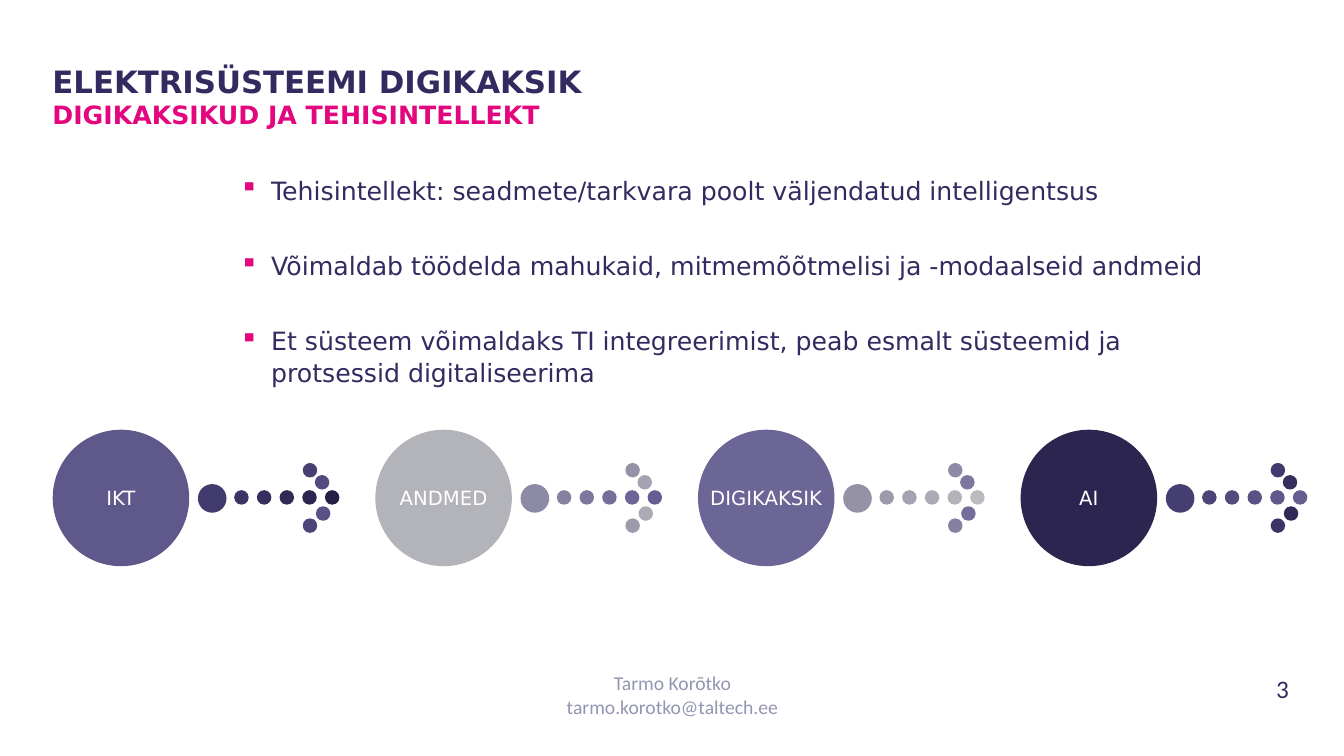
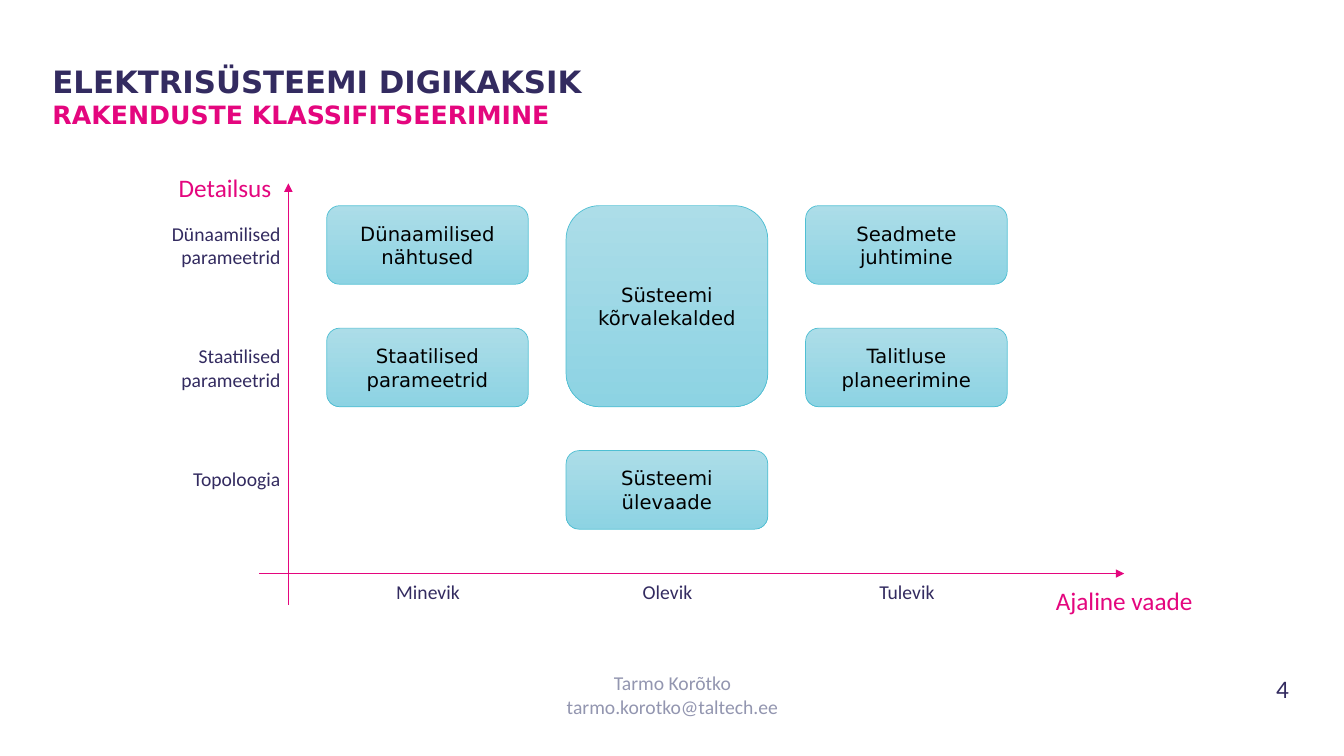
from dataclasses import dataclass
from typing import NamedTuple

from lxml.etree import SubElement
from pptx import Presentation
from pptx.dml.color import RGBColor
from pptx.enum.shapes import MSO_CONNECTOR, MSO_SHAPE
from pptx.enum.text import MSO_ANCHOR, PP_ALIGN
from pptx.oxml.ns import qn
from pptx.util import Inches, Pt


@dataclass(frozen=True)
class Theme:
    navy: str = "332B60"
    pink: str = "E4067E"
    muted: str = "9396B0"
    white: str = "FFFFFF"
    black: str = "000000"
    tile_top: str = "ACDDE8"
    tile_bottom: str = "8DD3E3"
    tile_edge: str = "4FBFD3"
    ramp: tuple = (
        "262047", "2B254F", "302A56", "352F5E", "3B3465", "413A6C",
        "463F72", "4C4579", "524B7F", "585285", "5F588B", "655F91",
        "6C6696", "746F9A", "7C789D", "8581A1", "8D8AA5", "9592A8",
        "9C9BAC", "A4A3B1", "ACABB5", "B3B3BA", "BBBABF",
    )
    display: str = "DejaVu Sans"
    plain: str = "Calibri"
    title: int = 22
    body: int = 18
    small: int = 14


THEME = Theme()


class Box(NamedTuple):
    left: float
    top: float
    width: float
    height: float

    def inside(self, dx, dy, width, height):
        return Box(self.left + dx, self.top + dy, width, height)

    def emu(self):
        return [Inches(length) for length in self]


def set_frame(frame, inset=None, anchor=MSO_ANCHOR.TOP, wrap=True):
    frame.word_wrap = wrap
    frame.vertical_anchor = anchor
    if inset is not None:
        frame.margin_left = frame.margin_right = Inches(inset)
        frame.margin_top = frame.margin_bottom = Inches(inset)
    return frame


def text_area(slide, box, **frame_format):
    return set_frame(slide.shapes.add_textbox(*box.emu()).text_frame, **frame_format)


def write(frame, text, size=THEME.small, color=THEME.navy, font=THEME.plain,
          bold=False, align=PP_ALIGN.LEFT, before=0, spacing=None, bullet=None):
    """Write one paragraph, after any text the frame already holds."""
    started = bool(frame.text)
    paragraph = frame.add_paragraph() if started else frame.paragraphs[0]
    if bullet:
        props = paragraph._p.get_or_add_pPr()
        props.set("marL", str(Inches(0.31)))
        props.set("indent", str(-Inches(0.31)))
        bullet_color = SubElement(props, qn("a:buClr"))
        SubElement(bullet_color, qn("a:srgbClr")).set("val", THEME.pink)
        SubElement(props, qn("a:buChar")).set("char", bullet)
    paragraph.alignment = align
    if started and before:
        paragraph.space_before = Pt(before)
    if spacing:
        paragraph.line_spacing = spacing
    run = paragraph.add_run()
    run.text = text
    run.font.size = Pt(size)
    run.font.name = font
    run.font.bold = bold
    run.font.color.rgb = RGBColor.from_string(color)


def add_circle(slide, box, color):
    circle = slide.shapes.add_shape(MSO_SHAPE.OVAL, *box.emu())
    circle.shadow.inherit = False
    circle.fill.solid()
    circle.fill.fore_color.rgb = RGBColor.from_string(color)
    circle.line.color.rgb = RGBColor.from_string(color)
    circle.line.width = Pt(1)
    return circle


def add_tile(slide, box, text):
    tile = slide.shapes.add_shape(MSO_SHAPE.ROUNDED_RECTANGLE, *box.emu())
    tile.shadow.inherit = False
    tile.fill.gradient()
    tile.fill.gradient_angle = 270
    for stop, color in zip(tile.fill.gradient_stops, (THEME.tile_top, THEME.tile_bottom)):
        stop.color.rgb = RGBColor.from_string(color)
    tile.line.color.rgb = RGBColor.from_string(THEME.tile_edge)
    tile.line.width = Pt(0.5)
    frame = set_frame(tile.text_frame, anchor=MSO_ANCHOR.MIDDLE)
    write(frame, text, font=THEME.display, color=THEME.black, align=PP_ALIGN.CENTER)


def add_axis(slide, *ends):
    axis = slide.shapes.add_connector(MSO_CONNECTOR.STRAIGHT, *map(Inches, ends))
    axis.line.color.rgb = RGBColor.from_string(THEME.pink)
    axis.line.width = Pt(0.5)
    SubElement(axis.line._get_or_add_ln(), qn("a:tailEnd")).set("type", "triangle")
    SubElement(axis._element.spPr, qn("a:effectLst"))


def add_base_slide(deck, subtitle, number):
    """Add a blank slide with the shared heading, footer and page number."""
    slide = deck.slides.add_slide(deck.slide_layouts[6])
    page = text_area(slide, Box(12.3, 6.63, 0.84, 0.4))
    write(page, str(number), size=THEME.body, align=PP_ALIGN.CENTER)
    footer = text_area(slide, Box(3.69, 6.61, 5.96, 0.58))
    for line in ("Tarmo Korõtko", "tarmo.korotko@taltech.ee"):
        write(footer, line, color=THEME.muted, align=PP_ALIGN.CENTER)
    heading = text_area(slide, Box(0.52, 0.62, 11.48, 0.89), inset=0)
    write(heading, "ELEKTRISÜSTEEMI DIGIKAKSIK", size=THEME.title,
          font=THEME.display, bold=True)
    write(heading, subtitle, size=THEME.body, color=THEME.pink,
          font=THEME.display, bold=True)
    return slide


def add_bullets(slide, box, points):
    frame = text_area(slide, box, inset=0)
    for point in points:
        write(frame, point, size=THEME.body, font=THEME.display,
              before=31, spacing=1.05, bullet="▪")


def add_stage(slide, box, label, colors):
    """Draw a labelled circle followed by an arrow made of dots."""
    *dot_colors, circle_color = colors
    dot, start_dot = 0.13, 0.27
    shaft = [(2.7 - 0.225 * step, 0.6, dot) for step in range(5)]
    head = [(2.48, 0.33, dot), (2.48, 0.88, dot), (2.6, 0.45, dot), (2.61, 0.76, dot)]
    dots = shaft + [(1.44, 0.54, start_dot)] + head
    for (dx, dy, size), color in zip(dots, dot_colors):
        add_circle(slide, box.inside(dx, dy, size, size), color)
    circle = add_circle(slide, box.inside(0, 0, box.height, box.height), circle_color)
    frame = set_frame(circle.text_frame, inset=0, anchor=MSO_ANCHOR.MIDDLE, wrap=False)
    write(frame, label, color=THEME.white, font=THEME.display, align=PP_ALIGN.CENTER)


def add_process(slide, box, labels):
    """Lay the stages out evenly, their colours running up the ramp and back."""
    colors = THEME.ramp + THEME.ramp[-2::-1]
    pitch = box.width / len(labels)
    per_stage = 11
    for index, label in enumerate(labels):
        first = index * per_stage
        add_stage(slide, box.inside(index * pitch, 0, pitch, box.height), label,
                  colors[first:first + per_stage])


def add_classification(slide, box):
    """Draw the axes, their labels and the tiles of applications."""
    origin_x, origin_y = box.left + 1.27, box.top + 4.03
    add_axis(slide, origin_x, origin_y + 0.31, origin_x, box.top + 0.16)
    add_axis(slide, origin_x - 0.29, origin_y, box.left + 9.56, origin_y)

    grid = box.inside(1.65, 0.38, 6.75, 3.21)
    column_pitch, row_pitch = 2.375, 1.215
    tile_width, tile_height = 2, 0.78
    tiles = [
        (0, 0, 1, "Dünaamilised nähtused"),
        (0, 1, 1, "Staatilised parameetrid"),
        (1, 0, 2, "Süsteemi kõrvalekalded"),
        (2, 0, 1, "Seadmete juhtimine"),
        (2, 1, 1, "Talitluse planeerimine"),
        (1, 2, 1, "Süsteemi ülevaade"),
    ]
    for column, row, rows, text in tiles:
        height = tile_height + (rows - 1) * row_pitch
        add_tile(slide, grid.inside(column * column_pitch, row * row_pitch,
                                    tile_width, height), text)

    detail = text_area(slide, box.inside(0.06, 0, 1.14, 0.4))
    write(detail, "Detailsus", size=THEME.body, color=THEME.pink, align=PP_ALIGN.RIGHT)
    time = text_area(slide, box.inside(8.78, 4.1, 1.56, 0.4), wrap=False)
    write(time, "Ajaline vaade", size=THEME.body, color=THEME.pink, align=PP_ALIGN.CENTER)

    levels = ("Dünaamilised parameetrid", "Staatilised parameetrid", "Topoloogia")
    for row, level in enumerate(levels):
        frame = text_area(slide, box.inside(0, 0.49 + row * row_pitch, 1.29, 0.57))
        write(frame, level, align=PP_ALIGN.RIGHT)
    for column, period in enumerate(("Minevik", "Olevik", "Tulevik")):
        frame = text_area(slide, box.inside(2.01 + column * column_pitch, 4.04, 1.29, 0.34))
        write(frame, period, align=PP_ALIGN.CENTER)


def main():
    deck = Presentation()
    deck.slide_width, deck.slide_height = Inches(13.33), Inches(7.5)

    twins = add_base_slide(deck, "DIGIKAKSIKUD JA TEHISINTELLEKT", 3)
    add_bullets(twins, Box(2.38, 1.72, 9.63, 2.38), (
        "Tehisintellekt: seadmete/tarkvara poolt väljendatud intelligentsus",
        "Võimaldab töödelda mahukaid, mitmemõõtmelisi ja -modaalseid andmeid",
        "Et süsteem võimaldaks TI integreerimist, peab esmalt süsteemid ja "
        "protsessid digitaliseerima",
    ))
    add_process(twins, Box(0.53, 4.27, 12.8, 1.34), ("IKT", "ANDMED", "DIGIKAKSIK", "AI"))

    applications = add_base_slide(deck, "RAKENDUSTE KLASSIFITSEERIMINE", 4)
    add_classification(applications, Box(1.59, 1.66, 10.34, 4.5))

    deck.save("out.pptx")


if __name__ == "__main__":
    main()
